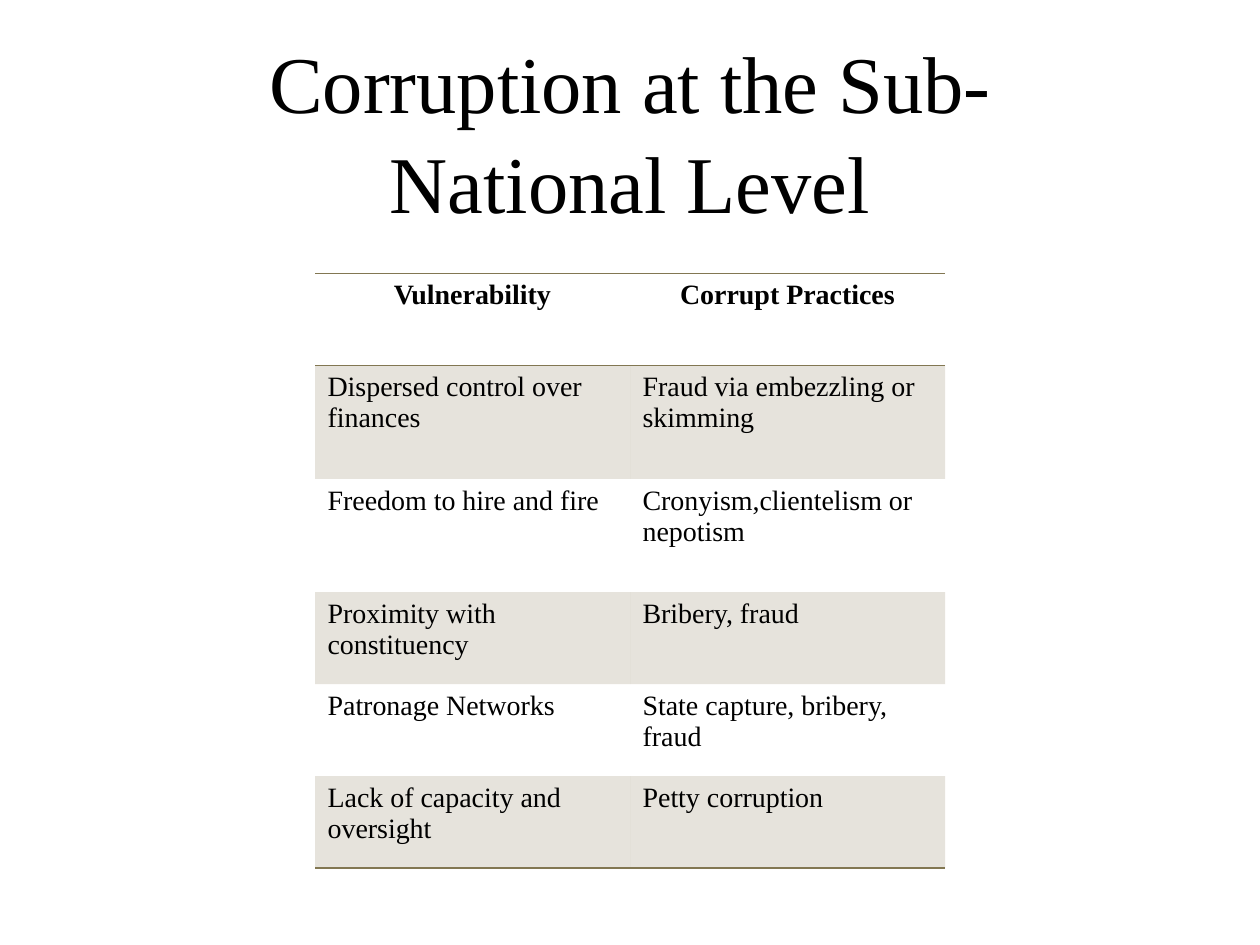
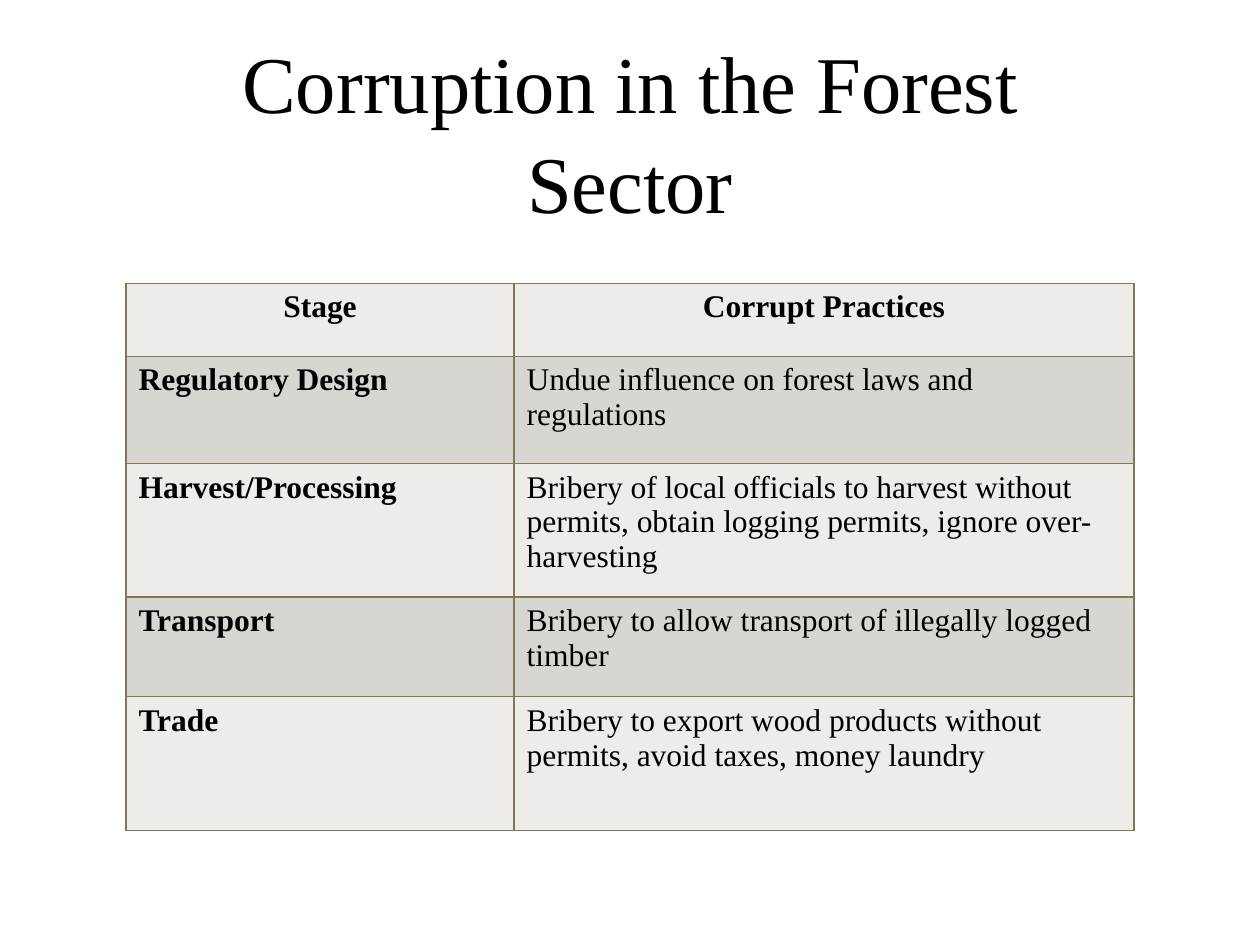
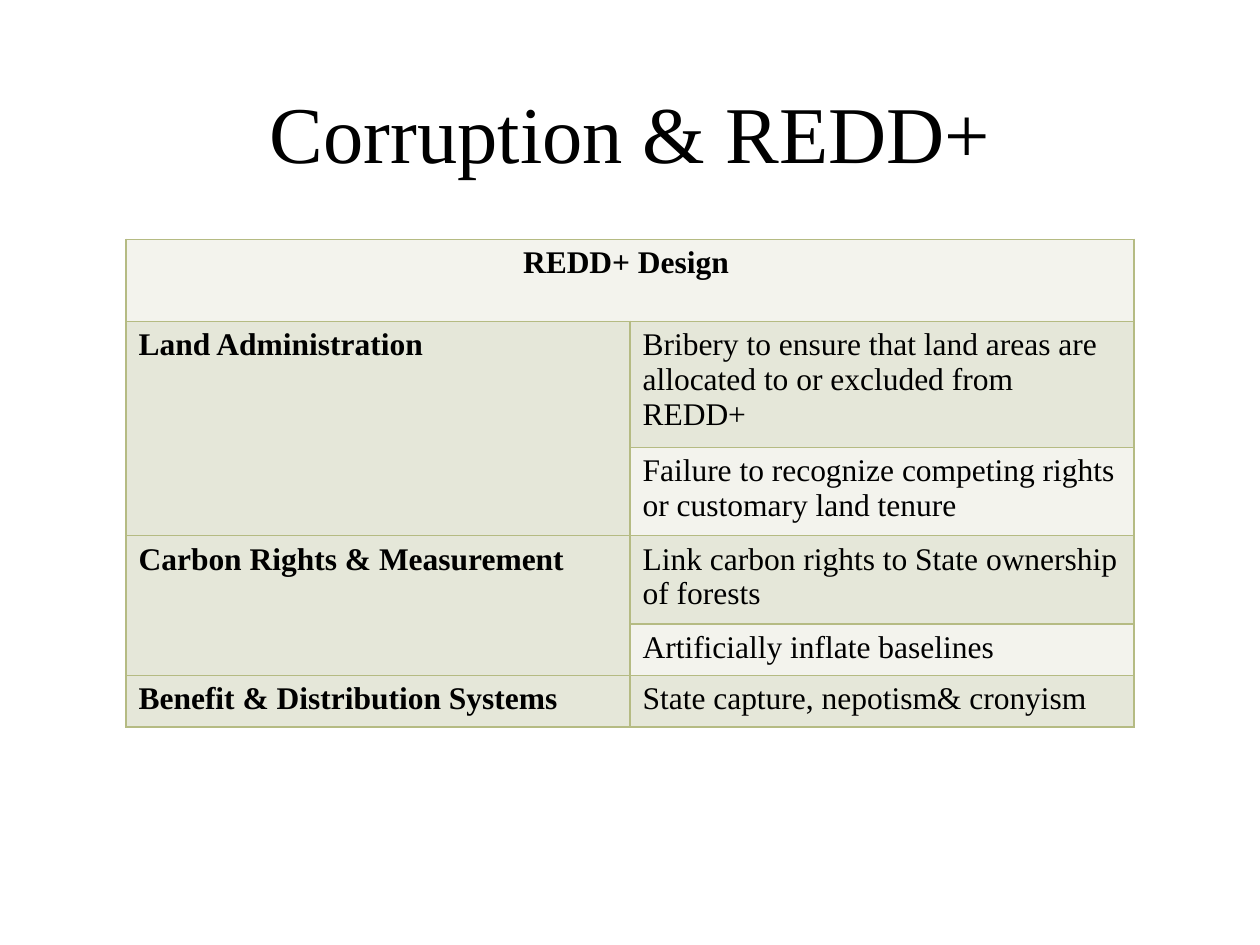
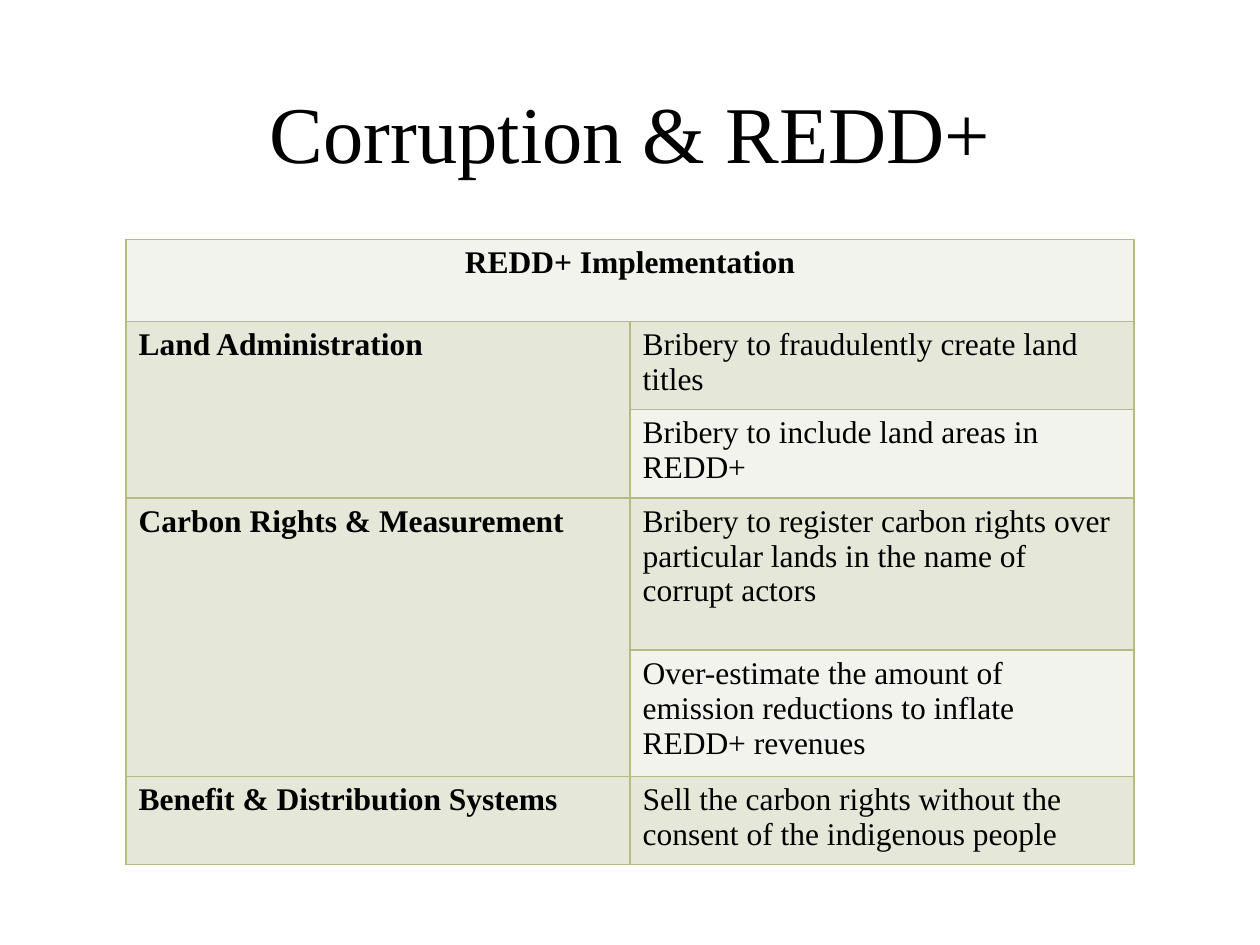
import dataclasses

import pptx
import pptx.dml.color
import pptx.enum.text
import pptx.oxml
import pptx.oxml.ns
import pptx.util

Inches = pptx.util.Inches
Pt = pptx.util.Pt
CENTER = pptx.enum.text.PP_ALIGN.CENTER
PLAIN_TABLE = "{2D5ABB26-0587-4C30-8999-92F81FD0307C}"


@dataclasses.dataclass(frozen=True)
class Theme:
    font: str = "Times New Roman"
    ink: str = "000000"
    title_size: int = 46
    body_size: int = 18
    small_size: int = 16
    title_spacing: float = 1.04
    rule_width: int = 1
    olive: str = "827752"
    stone: tuple = ("EDECE9", "D8D6D1")
    moss: str = "B5BB83"
    leaf: tuple = ("F3F3ED", "E5E7D9")
    tint_opacity: int = 20


class Deck:
    def __init__(self, theme):
        self.theme = theme
        self.presentation = pptx.Presentation()
        self.presentation.slide_width = Inches(10)
        self.presentation.slide_height = Inches(7.5)
        self.slide = None

    def start(self, heading):
        self.slide = self.presentation.slides.add_slide(self.presentation.slide_layouts[6])
        box = self.slide.shapes.add_textbox(Inches(1), Inches(0.55), Inches(8), Inches(0.95))
        box.text_frame.word_wrap = True
        box.text_frame.vertical_anchor = pptx.enum.text.MSO_ANCHOR.MIDDLE
        line = box.text_frame.paragraphs[0]
        line.alignment = CENTER
        line.line_spacing = self.theme.title_spacing
        self.add_words(line, heading, self.theme.title_size)

    def add_words(self, paragraph, words, size, bold=False):
        run = paragraph.add_run()
        run.text = words
        run.font.name = self.theme.font
        run.font.size = Pt(size)
        run.font.bold = bold
        run.font.color.rgb = pptx.dml.color.RGBColor.from_string(self.theme.ink)

    def table(self, left, top, widths, heights, rows):
        frame = self.slide.shapes.add_table(
            len(rows), len(widths), Inches(left), Inches(top),
            Inches(sum(widths)), Inches(sum(heights)))
        grid = frame.table
        grid.first_row = grid.horz_banding = False
        grid._tbl.tblPr.find(pptx.oxml.ns.qn("a:tableStyleId")).text = PLAIN_TABLE
        for column, width in zip(grid.columns, widths):
            column.width = Inches(width)
        for row, height in zip(grid.rows, heights):
            row.height = Inches(height)
        return grid

    def fill(self, cell, color, opacity=100):
        cell.fill.solid()
        cell.fill.fore_color.rgb = pptx.dml.color.RGBColor.from_string(color)
        if opacity < 100:
            tint = cell._tc.tcPr.find(".//" + pptx.oxml.ns.qn("a:srgbClr"))
            tint.append(pptx.oxml.parse_xml(
                f'<a:alpha {pptx.oxml.ns.nsdecls("a")} val="{opacity * 1000}"/>'))

    def border(self, cell, color, sides="LRTB"):
        properties = cell._tc.get_or_add_tcPr()
        for place, side in enumerate(sides):
            properties.insert(place, pptx.oxml.parse_xml(
                f'<a:ln{side} {pptx.oxml.ns.nsdecls("a")} w="{Pt(self.theme.rule_width)}">'
                f'<a:solidFill><a:srgbClr val="{color}"/></a:solidFill></a:ln{side}>'))

    def cell_text(self, cell, words, size, bold, header):
        line = cell.text_frame.paragraphs[0]
        if header:
            line.alignment = CENTER
        self.add_words(line, words, size, bold)

    def ruled_table(self, left, top, widths, heights, rows):
        grid = self.table(left, top, widths, heights, rows)
        edges = {0: "TB", len(rows) - 1: "B"}
        for r, row in enumerate(rows):
            for c, words in enumerate(row):
                cell = grid.cell(r, c)
                self.cell_text(cell, words, self.theme.small_size, r == 0, r == 0)
                if r % 2:
                    self.fill(cell, self.theme.olive, self.theme.tint_opacity)
                else:
                    cell.fill.background()
                self.border(cell, self.theme.olive, edges.get(r, ""))

    def boxed_table(self, left, top, widths, heights, rows, line, bands):
        grid = self.table(left, top, widths, heights, rows)
        for r, row in enumerate(rows):
            for c, words in enumerate(row):
                cell = grid.cell(r, c)
                if words is None:
                    origin = grid.cell(r, 0) if r == 0 else grid.cell(r - 1, c)
                    origin.merge(cell)
                else:
                    self.cell_text(cell, words, self.theme.body_size, r == 0 or c == 0, r == 0)
                self.fill(cell, bands[r % 2])
                self.border(cell, line)

    def redd_slide(self, phase, heights, practices):
        land, more_land, carbon, more_carbon, benefit = practices
        self.start("Corruption & REDD+")
        self.boxed_table(1, 1.9, (4, 4), heights, [
            (phase, None),
            ("Land Administration", land),
            (None, more_land),
            ("Carbon Rights & Measurement", carbon),
            (None, more_carbon),
            ("Benefit & Distribution Systems", benefit),
        ], self.theme.moss, self.theme.leaf)


def main():
    theme = Theme()
    deck = Deck(theme)

    deck.start("Corruption at the Sub-National Level")
    deck.ruled_table(2.5, 2.17, (2.5, 2.5), (0.73, 0.9, 0.9, 0.73, 0.73, 0.73), [
        ("Vulnerability", "Corrupt Practices"),
        ("Dispersed control over finances", "Fraud via embezzling or skimming"),
        ("Freedom to hire and fire", "Cronyism,clientelism or nepotism"),
        ("Proximity with constituency", "Bribery, fraud"),
        ("Patronage Networks", "State capture, bribery, fraud"),
        ("Lack of capacity and oversight", "Petty corruption"),
    ])

    deck.start("Corruption in the Forest Sector")
    deck.boxed_table(1, 2.25, (3.08, 4.92), (0.58, 0.85, 1.06, 0.79, 1.06), [
        ("Stage", "Corrupt Practices"),
        ("Regulatory Design", "Undue influence on forest laws and regulations"),
        ("Harvest/Processing", "Bribery of local officials to harvest without permits, "
                               "obtain logging permits, ignore over-harvesting"),
        ("Transport", "Bribery to allow transport of illegally logged timber"),
        ("Trade", "Bribery to export wood products without permits, avoid taxes, money laundry"),
    ], theme.olive, theme.stone)

    deck.redd_slide("REDD+ Design ", (0.65, 0.94, 0.65, 0.65, 0.41, 0.41), (
        "Bribery to ensure that land areas are allocated to or excluded from REDD+",
        "Failure to recognize competing rights or customary land tenure",
        "Link carbon rights to State ownership of forests",
        "Artificially inflate baselines",
        "State capture, nepotism& cronyism",
    ))

    deck.redd_slide("REDD+ Implementation", (0.65, 0.65, 0.65, 1.21, 0.93, 0.65), (
        "Bribery to fraudulently create land titles",
        "Bribery to include land areas in REDD+",
        "Bribery to register carbon rights over particular lands in the name of corrupt actors",
        "Over-estimate the amount of emission reductions to inflate REDD+ revenues",
        "Sell the carbon rights without the consent of the indigenous people",
    ))

    deck.presentation.save("out.pptx")


if __name__ == "__main__":
    main()
